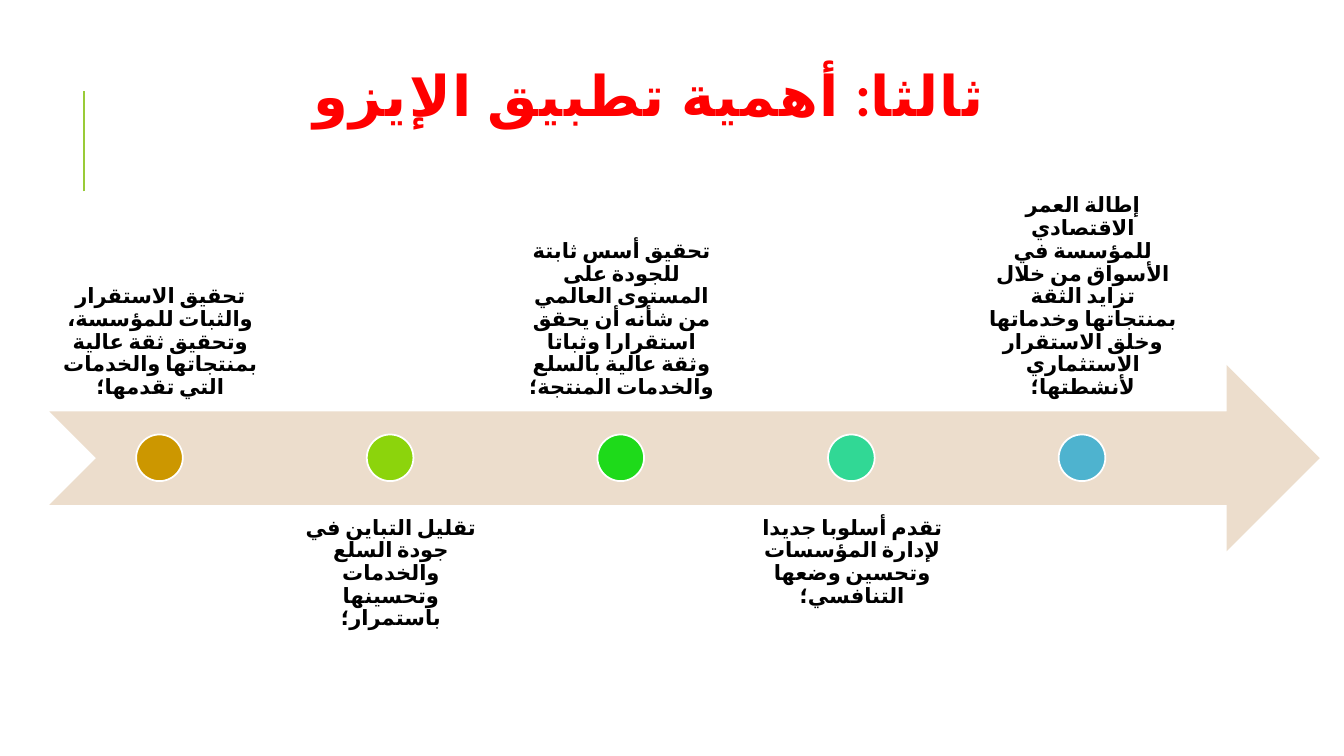
from lxml.etree import SubElement
from pptx import Presentation
from pptx.dml.color import RGBColor
from pptx.enum.shapes import MSO_CONNECTOR as Link, MSO_SHAPE as Shape
from pptx.enum.text import MSO_ANCHOR as Anchor, MSO_AUTO_SIZE as Fit, PP_ALIGN as Align
from pptx.oxml.ns import qn
from pptx.util import Inches, Pt

COLORS = {
    "title": "FF0000",
    "text": "000000",
    "rule": "99CB38",
    "arrow": "ECDDCC",
    "ring": "FFFFFF",
    "gold": "CC9700",
    "lime": "8CD40C",
    "green": "1EDA1A",
    "mint": "31D895",
    "blue": "4EB3CF",
}

STEPS = [
    ("gold", "تحقيق الاستقرار والثبات للمؤسسة، وتحقيق ثقة عالية بمنتجاتها والخدمات التي تقدمها؛"),
    ("lime", "تقليل التباين في جودة السلع والخدمات وتحسينها باستمرار؛"),
    ("green", "تحقيق أسس ثابتة للجودة على المستوى العالمي من شأنه أن يحقق استقرارا وثباتا وثقة عالية بالسلع والخدمات المنتجة؛"),
    ("mint", "تقدم أسلوبا جديدا لإدارة المؤسسات وتحسين وضعها التنافسي؛"),
    ("blue", "إطالة العمر الاقتصادي للمؤسسة في الأسواق من خلال تزايد الثقة بمنتجاتها وخدماتها وخلق الاستقرار الاستثماري لأنشطتها؛"),
]


class Deck:
    def __init__(self):
        self.prs = Presentation()
        self.prs.slide_width = Inches(13.33)
        self.prs.slide_height = Inches(7.5)
        self.slide = self.prs.slides.add_slide(self.prs.slide_layouts[5])
        self.shapes = self.slide.shapes

    def color(self, name):
        return RGBColor.from_string(COLORS[name])

    def place(self, left, top, width, height):
        wide, high = self.prs.slide_width, self.prs.slide_height
        return [int(share * side / 100) for share, side in
                zip((left, top, width, height), (wide, high, wide, high))]

    def style(self, frame, text, face, size, tint, space, anchor):
        frame.text = text
        frame.word_wrap = True
        frame.auto_size = Fit.NONE
        frame.vertical_anchor = anchor
        para = frame.paragraphs[0]
        para.alignment = Align.CENTER
        para.line_spacing = space
        font = para.font
        font.name, font.size, font.bold = face, Pt(size), True
        font.color.rgb = self.color(tint)
        props = para.runs[0]._r.get_or_add_rPr()
        props.set("lang", "ar-DZ")
        SubElement(props, qn("a:cs"), typeface=face)
        return para

    def title(self, text, *box):
        title = self.shapes.title
        title.left, title.top, title.width, title.height = self.place(*box)
        para = self.style(title.text_frame, text, "Lato", 40, "title", 0.8, Anchor.MIDDLE)
        para._p.get_or_add_pPr().set("rtl", "1")
        para.runs[0]._r.get_or_add_rPr().set("spc", "100")

    def label(self, text, anchor, *box):
        frame = self.shapes.add_textbox(*self.place(*box)).text_frame
        frame.margin_left = frame.margin_right = Inches(0.12)
        frame.margin_top = frame.margin_bottom = Inches(0.12)
        self.style(frame, text, "Calibri", 15, "text", 0.9, anchor)

    def form(self, kind, fill, ring, *box):
        shape = self.shapes.add_shape(kind, *self.place(*box))
        shape.shadow.inherit = False
        shape.fill.solid()
        shape.fill.fore_color.rgb = self.color(fill)
        if ring:
            shape.line.color.rgb = self.color(ring)
            shape.line.width = Pt(1.25)
        else:
            shape.line.fill.background()

    def rule(self, left, top, height):
        x, y, _, high = self.place(left, top, 0, height)
        line = self.shapes.add_connector(Link.STRAIGHT, x, y + high, x, y)
        line.line.color.rgb = self.color("rule")
        line.line.width = Pt(1.5)
        SubElement(line._element.spPr, qn("a:effectLst"))


def main():
    deck = Deck()
    deck.rule(6.25, 12, 13.33)
    deck.title("ثالثا: أهمية تطبيق الإيزو", 8.4, 8.53, 79.74, 9.6)
    deck.form(Shape.NOTCHED_RIGHT_ARROW, "arrow", None, 3.68, 48.27, 94.52, 24.67)
    for index, (tint, text) in enumerate(STEPS):
        shift = index * 17.16
        top, anchor = (66.8, Anchor.TOP) if index % 2 else (29.73, Anchor.BOTTOM)
        deck.label(text, anchor, 3.75 + shift, top, 16.35, 24.67)
        deck.form(Shape.OVAL, tint, "ring", 10.13 + shift, 57.47, 3.47, 6.17)
    deck.prs.save("out.pptx")


if __name__ == "__main__":
    main()
